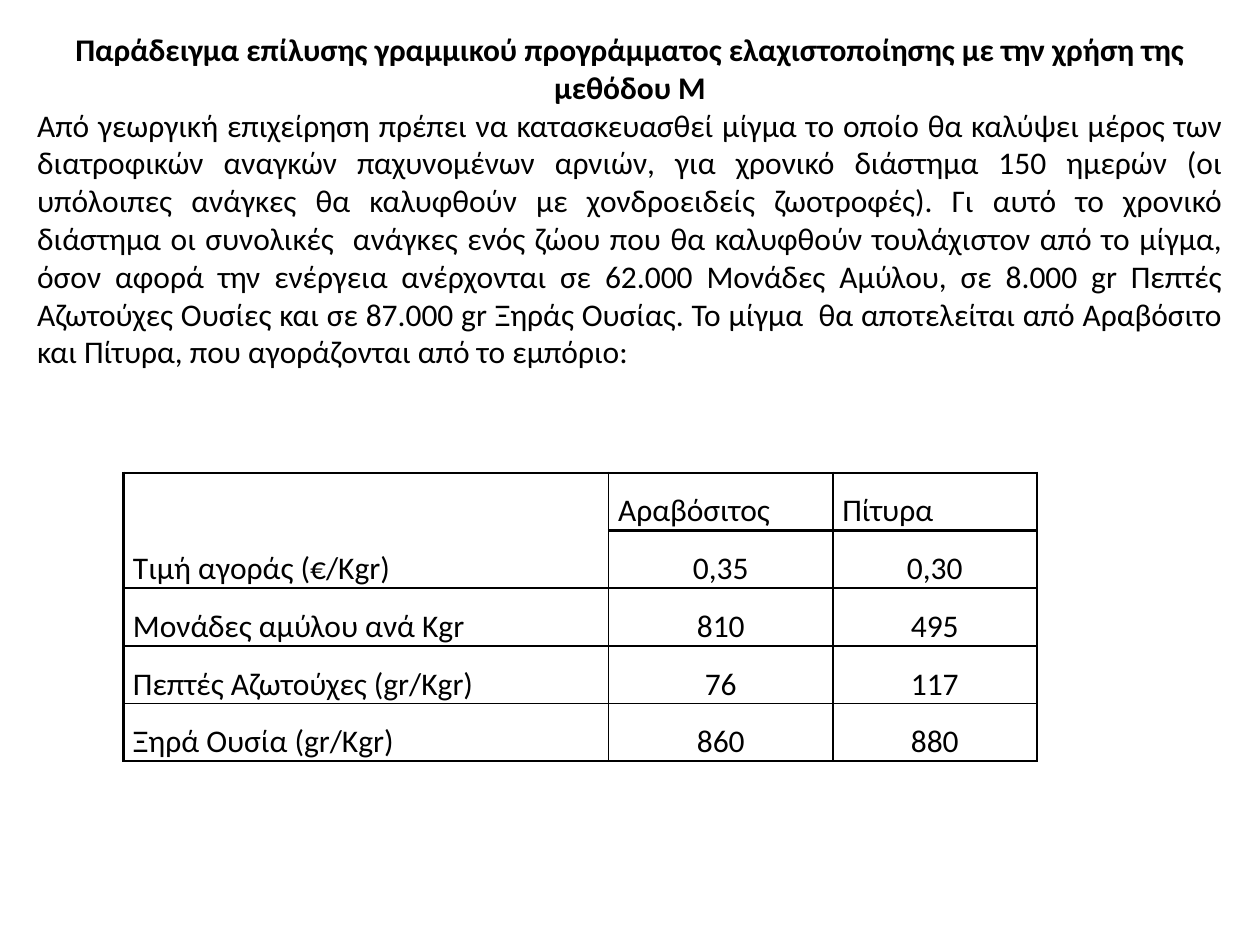
"""Build the slide that states the feed mix problem and its data table."""
from lxml.etree import SubElement
from pptx import Presentation
from pptx.dml.color import RGBColor
from pptx.enum.text import MSO_ANCHOR as Anchor, PP_ALIGN as Align
from pptx.oxml.ns import qn
from pptx.util import Cm, Pt

COLORS = {"ink": "000000"}
FONT, TEXT_SIZE = "Calibri", 18
OUTER, INNER = 1.5, 1
TITLE = "Παράδειγμα επίλυσης γραμμικού προγράμματος ελαχιστοποίησης με την χρήση της μεθόδου Μ"
PROBLEM = (
    "Από γεωργική επιχείρηση πρέπει να κατασκευασθεί μίγμα το οποίο θα καλύψει μέρος των "
    "διατροφικών αναγκών παχυνομένων αρνιών, για χρονικό διάστημα 150 ημερών (οι υπόλοιπες "
    "ανάγκες θα καλυφθούν με χονδροειδείς ζωοτροφές). Γι αυτό το χρονικό διάστημα οι "
    "συνολικές  ανάγκες ενός ζώου που θα καλυφθούν τουλάχιστον από το μίγμα, όσον αφορά την "
    "ενέργεια ανέρχονται σε 62.000 Μονάδες Αμύλου, σε 8.000 gr Πεπτές Αζωτούχες Ουσίες και "
    "σε 87.000 gr Ξηράς Ουσίας. Το μίγμα  θα αποτελείται από Αραβόσιτο και Πίτυρα, που "
    "αγοράζονται από το εμπόριο:"
)
FEEDS = [
    ("", "Αραβόσιτος", "Πίτυρα"),
    ("Τιμή αγοράς (€/Kgr)", "0,35", "0,30"),
    ("Μονάδες αμύλου ανά Kgr", "810", "495"),
    ("Πεπτές Αζωτούχες (gr/Kgr)", "76", "117"),
    ("Ξηρά Ουσία (gr/Kgr)", "860", "880"),
]
COLUMN_WIDTHS = [9.78, 4.52, 4.11]
ROW_HEIGHT = 1.14


def write(paragraph, text, align, bold=False):
    paragraph.alignment = align
    run = paragraph.add_run()
    run.text = text
    run.font.name, run.font.size, run.font.bold = FONT, Pt(TEXT_SIZE), bold
    run.font.color.rgb = RGBColor.from_string(COLORS["ink"])


def horizontal_width(edge, column):
    if edge == 1:
        return OUTER if column else 0
    return OUTER if edge in (0, len(FEEDS)) else INNER


def vertical_width(edge):
    return OUTER if edge in (0, len(COLUMN_WIDTHS)) else INNER


def draw_borders(cell, row, column):
    widths = {
        "L": vertical_width(column),
        "R": vertical_width(column + 1),
        "T": horizontal_width(row, column),
        "B": horizontal_width(row + 1, column),
    }
    properties = cell._tc.get_or_add_tcPr()
    for side, width in widths.items():
        line = SubElement(properties, qn(f"a:ln{side}"), w=str(Pt(width)))
        if width:
            fill = SubElement(line, qn("a:solidFill"))
            SubElement(fill, qn("a:srgbClr"), val=COLORS["ink"])
        else:
            SubElement(line, qn("a:noFill"))


def add_problem(slide):
    box = slide.shapes.add_textbox(Cm(0.5), Cm(0.48), Cm(24.4), Cm(7.95))
    frame = box.text_frame
    frame.word_wrap = True
    frame.vertical_anchor = Anchor.TOP
    write(frame.paragraphs[0], TITLE, Align.CENTER, bold=True)
    write(frame.add_paragraph(), PROBLEM, Align.JUSTIFY)


def add_feed_table(slide):
    shape = slide.shapes.add_table(
        len(FEEDS), len(COLUMN_WIDTHS), Cm(2.49), Cm(9.53),
        Cm(sum(COLUMN_WIDTHS)), Cm(ROW_HEIGHT * len(FEEDS)),
    )
    table = shape.table
    table.first_row = table.horz_banding = False
    for column, width in zip(table.columns, COLUMN_WIDTHS):
        column.width = Cm(width)
    for row, values in enumerate(FEEDS):
        table.rows[row].height = Cm(ROW_HEIGHT)
        for column, value in enumerate(values):
            cell = table.cell(row, column)
            cell.margin_left = cell.margin_right = Cm(0.19)
            cell.margin_top = cell.margin_bottom = 0
            draw_borders(cell, row, column)
            cell.fill.background()
            if value:
                paragraph = cell.text_frame.paragraphs[0]
                paragraph.line_spacing = 1.5
                paragraph.space_before = Pt(12)
                write(paragraph, value, Align.CENTER if row and column else Align.JUSTIFY)


def main():
    presentation = Presentation()
    presentation.slide_width, presentation.slide_height = Cm(25.4), Cm(19.05)
    slide = presentation.slides.add_slide(presentation.slide_layouts[6])
    add_feed_table(slide)
    add_problem(slide)
    presentation.save("out.pptx")


if __name__ == "__main__":
    main()
